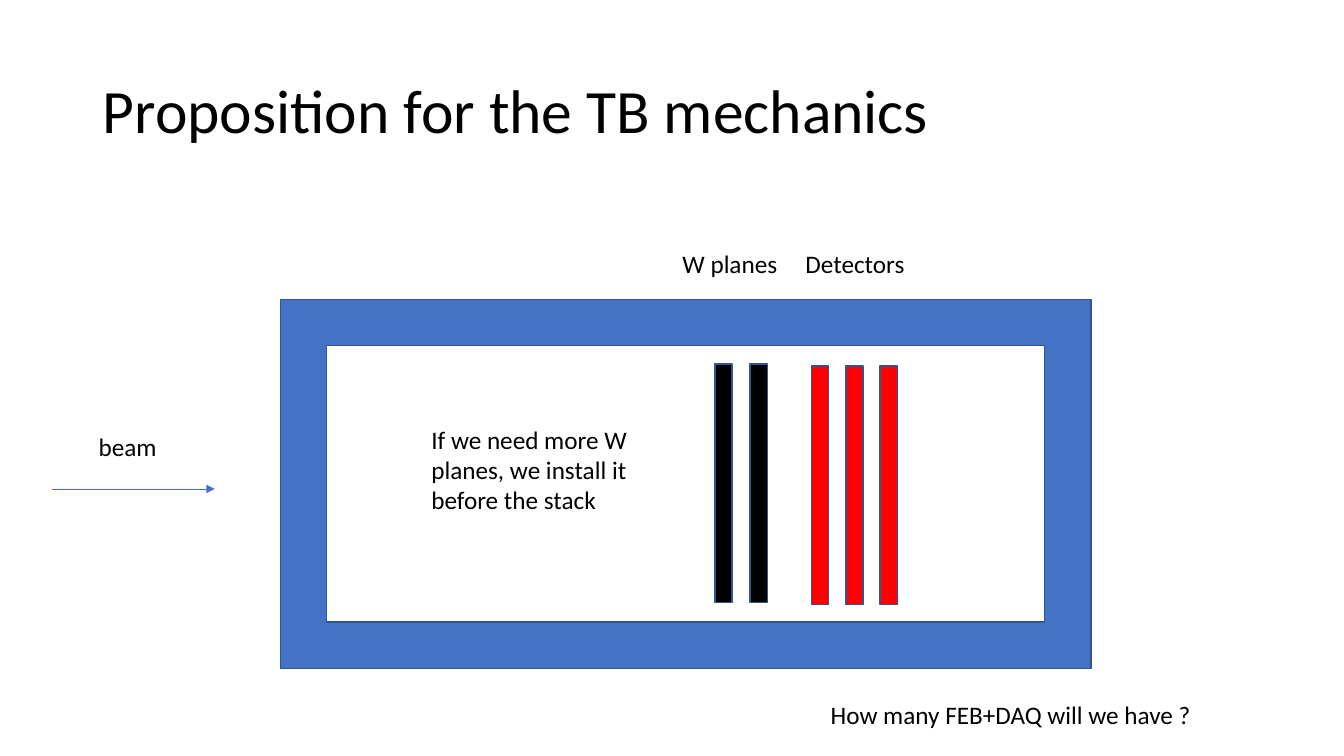
from dataclasses import dataclass

from pptx import Presentation
from pptx.dml.color import RGBColor as Rgb
from pptx.enum.shapes import MSO_CONNECTOR as Connector, MSO_SHAPE as Shape
from pptx.enum.text import MSO_ANCHOR as Anchor, MSO_AUTO_SIZE as AutoSize, PP_ALIGN as Align
from pptx.oxml.ns import qn
from pptx.util import Inches, Pt
from lxml.etree import SubElement


@dataclass(frozen=True)
class Theme:
    font: str = "Calibri"
    title_size: int = 44
    label_size: int = 18
    ink: Rgb = Rgb(0, 0, 0)
    frame: Rgb = Rgb(0x44, 0x72, 0xC4)
    outline: Rgb = Rgb(0x32, 0x54, 0x91)
    tungsten: Rgb = Rgb(0, 0, 0)
    detector: Rgb = Rgb(0xFF, 0, 0)


THEME = Theme()
WIDTH, HEIGHT = 13.33, 7.5
PLANE_WIDTH, PLANE_HEIGHT = 0.17, 2.37


def box(left, top, width, height):
    return [Inches(length) for length in (left, top, width, height)]


def apply_format(target, values):
    for attribute, value in values.items():
        setattr(target, attribute, value)


def style_text(frame, text, size):
    frame.text = text
    paragraph = frame.paragraphs[0]
    paragraph.alignment = Align.LEFT
    font = paragraph.runs[0].font
    apply_format(font, {"name": THEME.font, "size": Pt(size)})
    font.color.rgb = THEME.ink
    return paragraph


def add_title(slide, text):
    title = slide.shapes.title
    position = box(0.92, 0.4, 11.5, 1.45)
    apply_format(title, dict(zip(("left", "top", "width", "height"), position)))
    paragraph = style_text(title.text_frame, text, THEME.title_size)
    paragraph.line_spacing = 0.9
    apply_format(title.text_frame, {
        "vertical_anchor": Anchor.MIDDLE, "auto_size": AutoSize.NONE})


def add_label(slide, text, left, top, width, height=0.4, wrap=False):
    label = slide.shapes.add_textbox(*box(left, top, width, height))
    style_text(label.text_frame, text, THEME.label_size)
    apply_format(label.text_frame, {
        "word_wrap": wrap, "auto_size": AutoSize.SHAPE_TO_FIT_TEXT})


def add_part(slide, kind, fill, *place):
    part = slide.shapes.add_shape(kind, *box(*place))
    part.shadow.inherit = False
    part.fill.solid()
    part.fill.fore_color.rgb = fill
    part.line.color.rgb = THEME.outline
    part.line.width = Pt(1)


def add_planes(slide, count, left, top, pitch, fill):
    for index in range(count):
        add_part(slide, Shape.RECTANGLE, fill,
                 left + index * pitch, top, PLANE_WIDTH, PLANE_HEIGHT)


def add_beam(slide, start, end, height):
    beam = slide.shapes.add_connector(
        Connector.STRAIGHT, *box(start, height, end, height))
    beam.line.color.rgb = THEME.frame
    beam.line.width = Pt(0.5)
    SubElement(beam.line._get_or_add_ln(), qn("a:tailEnd"), type="triangle")
    SubElement(beam._element.spPr, qn("a:effectLst"))


def main():
    deck = Presentation()
    apply_format(deck, {"slide_width": Inches(WIDTH), "slide_height": Inches(HEIGHT)})
    slide = deck.slides.add_slide(deck.slide_layouts.get_by_name("Title Only"))
    add_title(slide, "Proposition for the TB mechanics")

    # Mechanical frame and incoming beam
    add_part(slide, Shape.FRAME, THEME.frame, 2.78, 2.97, 8.04, 3.66)
    add_beam(slide, 0.52, 2.13, 4.85)

    # Stack: detectors behind the tungsten planes
    add_planes(slide, 3, 8.05, 3.63, 0.34, THEME.detector)
    add_planes(slide, 2, 7.09, 3.61, 0.35, THEME.tungsten)

    # Labels
    add_label(slide, "If we need more W planes, we install it before the stack",
              4.18, 4.16, 2.8, 1.01, wrap=True)
    add_label(slide, "Detectors", 7.89, 2.41, 1.19)
    add_label(slide, "W planes", 6.67, 2.41, 1.15)
    add_label(slide, "beam", 0.88, 4.23, 0.78)
    add_label(slide, "How many FEB+DAQ will we have ?", 8.14, 6.89, 3.81)

    deck.save("out.pptx")


if __name__ == "__main__":
    main()
